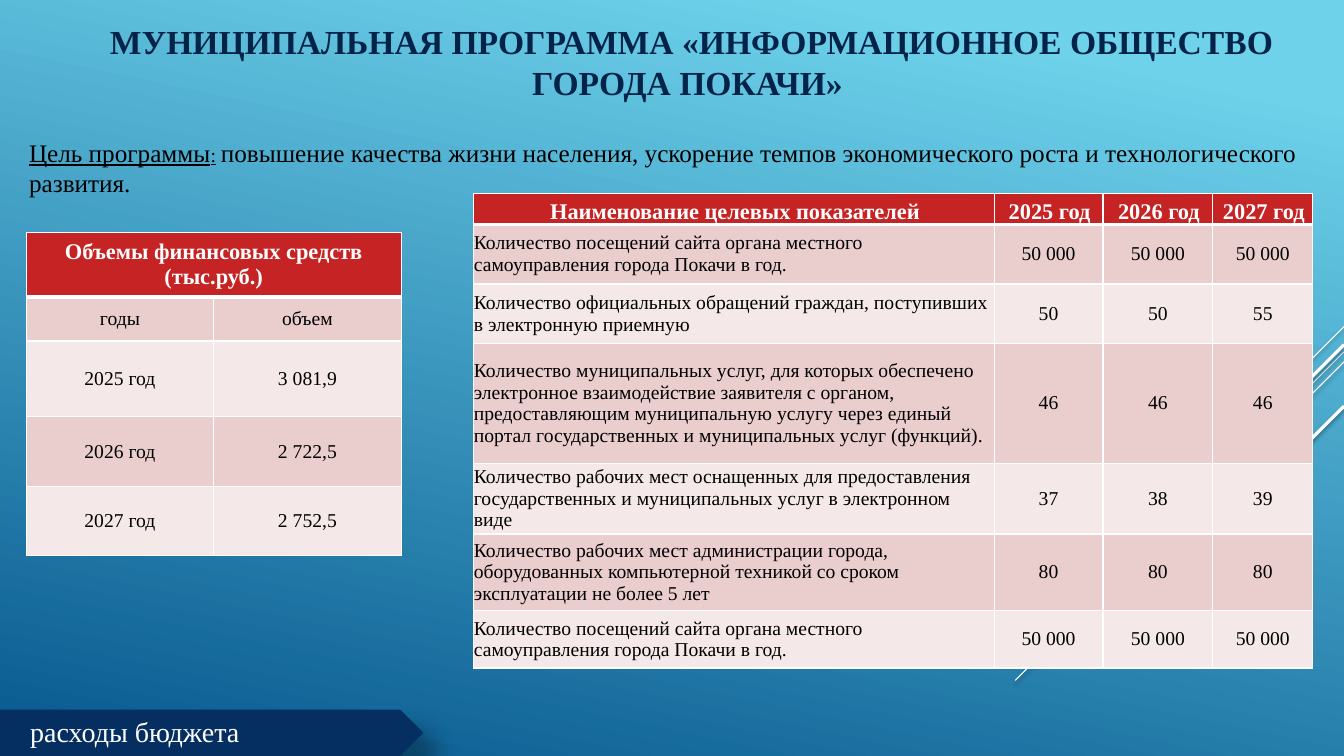
from dataclasses import dataclass

from lxml import etree
from pptx import Presentation, util as u
from pptx.dml.color import RGBColor
from pptx.enum import shapes, text
from pptx.oxml import ns

CENTER, LEFT = text.PP_ALIGN.CENTER, text.PP_ALIGN.LEFT
MIDDLE, TOP, BOTTOM = (text.MSO_ANCHOR.MIDDLE, text.MSO_ANCHOR.TOP,
                       text.MSO_ANCHOR.BOTTOM)


@dataclass(frozen=True)
class Theme:
    font: str = "Times New Roman"
    sky: str = "6ED2EB"
    deep: str = "06588E"
    navy: str = "052F61"
    title: str = "042349"
    white: str = "FFFFFF"
    black: str = "000000"
    header: str = "C62324"
    bands: tuple = ("EACDCD", "F5E8E8")
    title_size: int = 24
    label_size: int = 20
    goal_size: int = 18
    header_size: int = 16
    body_size: int = 14


def add_xml(parent, tag, **attributes):
    return etree.SubElement(parent, ns.qn(tag),
                            {key: str(value) for key, value in attributes.items()})


class BudgetSlide:
    def __init__(self, slide, theme):
        self.slide, self.theme = slide, theme

    def background(self, angle):
        fill = self.slide.background.fill
        fill.gradient()
        fill.gradient_angle = 360 - angle
        stops = ((0.1, self.theme.sky), (1, self.theme.deep))
        for stop, (position, color) in zip(fill.gradient_stops, stops):
            stop.position = position
            stop.color.rgb = RGBColor.from_string(color)

    def shadow(self, shape, opacity, blur, distance, angle):
        """Cast an outer shadow: opacity in percent, lengths in points."""
        effects = add_xml(shape._element.spPr, "a:effectLst")
        outer = add_xml(effects, "a:outerShdw", blurRad=int(u.Pt(blur)),
                        dist=int(u.Pt(distance)), dir=angle * 60000,
                        algn="ctr", rotWithShape=0)
        color = add_xml(outer, "a:srgbClr", val=self.theme.black)
        add_xml(color, "a:alpha", val=opacity * 1000)

    def ray(self, start_y, run, weight):
        """Draw a 45° line from the right edge down to the left."""
        right = 13.33
        line = self.slide.shapes.add_connector(
            shapes.MSO_CONNECTOR.STRAIGHT, u.Inches(right), u.Inches(start_y),
            u.Inches(right - run), u.Inches(start_y + run))
        line.line.color.rgb = RGBColor.from_string(self.theme.white)
        line.line.width = u.Pt(weight)
        self.shadow(line, 38, 3.1, 1.6, 90)

    def format_run(self, run, size, color, bold=False, underline=False):
        font = run.font
        font.name, font.size = self.theme.font, u.Pt(size)
        font.bold, font.underline = bold, underline
        font.color.rgb = RGBColor.from_string(color)

    def text_box(self, box, pieces, color, align=LEFT, top_inset=0.05):
        """Write one paragraph of (words, size, bold, underline) pieces."""
        frame = self.slide.shapes.add_textbox(*map(u.Inches, box)).text_frame
        frame.word_wrap = True
        frame.vertical_anchor = TOP
        frame.margin_top = u.Inches(top_inset)
        paragraph = frame.paragraphs[0]
        paragraph.alignment = align
        for words, size, bold, underline in pieces:
            run = paragraph.add_run()
            run.text = words
            self.format_run(run, size, color, bold, underline)

    def plate(self, box):
        plate = self.slide.shapes.add_shape(
            shapes.MSO_SHAPE.PENTAGON, *map(u.Inches, box))
        plate.fill.solid()
        plate.fill.fore_color.rgb = RGBColor.from_string(self.theme.navy)
        plate.line.fill.background()
        self.shadow(plate, 30, 15, 18, 45)

    def borders(self, cell, above, below):
        properties = cell._tc.get_or_add_tcPr()
        for side, width in (("L", 1), ("R", 1), ("T", above), ("B", below)):
            line = add_xml(properties, f"a:ln{side}", w=int(u.Pt(width)))
            fill = add_xml(line, "a:solidFill")
            add_xml(fill, "a:srgbClr", val=self.theme.white)

    def cell(self, cell, words, row, align, anchor, insets):
        theme, is_header = self.theme, row == 0
        self.borders(cell, 3 if row == 1 else 1, 3 if is_header else 1)
        cell.fill.solid()
        color = theme.header if is_header else theme.bands[(row - 1) % 2]
        cell.fill.fore_color.rgb = RGBColor.from_string(color)
        cell.vertical_anchor = anchor
        cell.margin_left = cell.margin_right = u.Inches(insets[0])
        cell.margin_top = cell.margin_bottom = u.Inches(insets[1])
        cell.text_frame.text = words
        paragraph = cell.text_frame.paragraphs[0]
        paragraph.alignment = align
        for run in paragraph.runs:
            self.format_run(run, theme.header_size if is_header else theme.body_size,
                            theme.white if is_header else theme.black, is_header)
        return paragraph

    def table(self, left, top, widths, heights):
        table = self.slide.shapes.add_table(
            len(heights), len(widths), u.Inches(left), u.Inches(top),
            u.Inches(sum(widths)), u.Inches(sum(heights))).table
        table.first_row = table.horz_banding = False
        for column, width in zip(table.columns, widths):
            column.width = u.Inches(width)
        for row, height in zip(table.rows, heights):
            row.height = u.Inches(height)
        return table

    def funding_table(self, rows):
        table = self.table(0.26, 2.31, [1.86] * 2, [0.61, 0.44, 0.75, 0.69, 0.69])
        for r, row in enumerate(rows):
            for c, words in enumerate(row):
                self.cell(table.cell(r, c), words, r, CENTER, MIDDLE, (0.13, 0.05))
        table.cell(0, 0).merge(table.cell(0, 1))

    def indicator_table(self, rows):
        table = self.table(4.7, 1.92, [5.16, 1.08, 1.09, 0.99],
                           [0.28, 0.59, 0.59, 1.19, 0.62, 0.76, 0.57])
        for r, row in enumerate(rows):
            for c, words in enumerate(row):
                paragraph = self.cell(
                    table.cell(r, c), words, r, LEFT if r and c == 0 else CENTER,
                    MIDDLE if r else BOTTOM, (0, 0) if r else (0.07, 0))
                if r == 0:
                    paragraph.line_spacing = 1.15
                    paragraph.space_after = u.Pt(10)
                    paragraph._p.get_or_add_pPr().set("indent", str(u.Inches(0.02)))


FUNDING = [
    ("Объемы финансовых средств (тыс.руб.)", ""),
    ("годы", "объем"),
    ("2025 год", "3 081,9"),
    ("2026 год", "2 722,5"),
    ("2027 год", "2 752,5"),
]
SITE_VISITS = ("Количество посещений сайта органа местного самоуправления "
               "города Покачи в год.", "50 000", "50 000", "50 000")
INDICATORS = [
    ("Наименование целевых показателей", "2025 год", "2026 год", "2027 год"),
    SITE_VISITS,
    ("Количество официальных обращений граждан, поступивших в электронную "
     "приемную", "50", "50", "55"),
    ("Количество муниципальных услуг, для которых обеспечено электронное "
     "взаимодействие заявителя с органом, предоставляющим муниципальную услугу "
     "через единый портал государственных и муниципальных услуг (функций).",
     "46", "46", "46"),
    ("Количество рабочих мест оснащенных для предоставления государственных и "
     "муниципальных услуг в электронном виде", "37", "38", "39"),
    ("Количество рабочих мест администрации города, оборудованных компьютерной "
     "техникой со сроком эксплуатации не более 5 лет", "80", "80", "80"),
    SITE_VISITS,
]
RAYS = [(3.24, 1, 0.75), (3.49, 3.26, 0.75), (3.59, 2.07, 0.75),
        (3.42, 1.91, 2.25), (4.03, 1.39, 2.25)]


def main():
    deck = Presentation()
    deck.slide_width, deck.slide_height = u.Inches(13.33), u.Inches(7.5)
    theme = Theme()
    page = BudgetSlide(deck.slides.add_slide(deck.slide_layouts[6]), theme)
    page.background(102)
    for ray in RAYS:
        page.ray(*ray)
    page.text_box(
        (0.38, 0.12, 12.96, 1.18),
        [("МУНИЦИПАЛЬНАЯ ПРОГРАММА «ИНФОРМАЦИОННОЕ ОБЩЕСТВО ГОРОДА ПОКАЧИ» ",
          theme.title_size, True, False)], theme.title, CENTER, 0.09)
    page.funding_table(FUNDING)
    page.indicator_table(INDICATORS)
    page.text_box(
        (0.19, 1.31, 12.96, 0.71),
        [("Цель программы", theme.goal_size, False, True),
         (":", theme.body_size, False, True),
         (" ", theme.body_size, False, False),
         ("повышение качества жизни населения, ускорение темпов экономического "
          "роста и технологического развития.", theme.goal_size, False, False)],
        theme.black)
    page.plate((0, 7.04, 4.2, 0.46))
    page.text_box((0.2, 7.04, 3.78, 0.44),
                  [("расходы бюджета", theme.label_size, False, False)], theme.white)
    deck.save("out.pptx")


if __name__ == "__main__":
    main()
